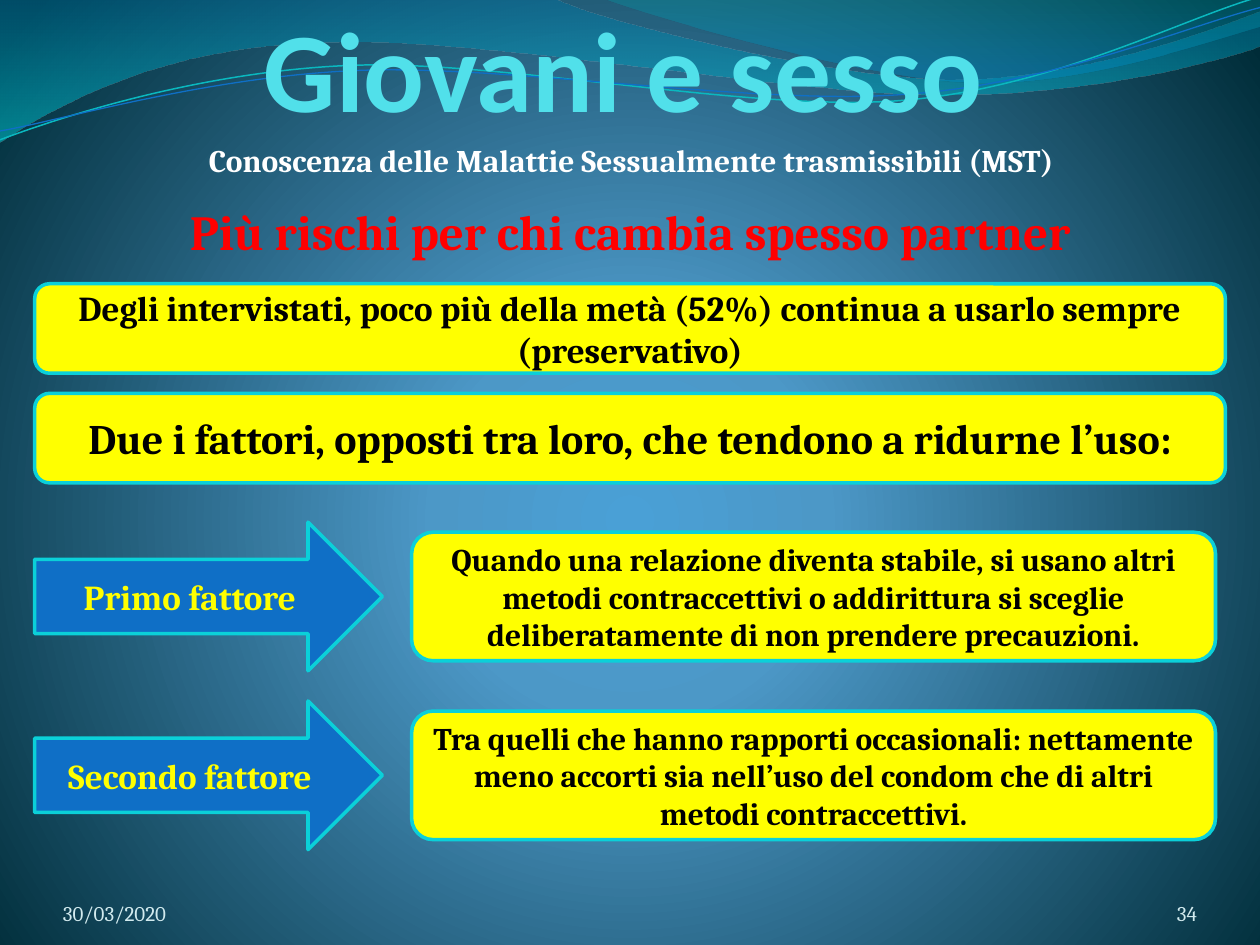
from pptx import Presentation
from pptx.dml.color import RGBColor
from pptx.enum.shapes import MSO_SHAPE
from pptx.enum.text import MSO_ANCHOR, MSO_AUTO_SIZE, PP_ALIGN
from pptx.oxml import parse_xml
from pptx.oxml.ns import nsdecls, qn
from pptx.util import Inches, Pt

WIDTH, HEIGHT = Inches(10), Inches(7.5)
COLORS = {
    "white": "FFFFFF", "black": "000000", "red": "FF0000", "yellow": "FFFF00",
    "title": "51E0EA", "footer": "D1EAEE", "blue": "0F6FC6",
    "outline": "0BD0D9", "strand": "0AB8BF",
}
BACKGROUND_STOPS = [(0, "4AA0D6", 100), (25, "4C98C7", 100), (100, "002C38", 100)]
RADIAL = '<a:path path="circle"><a:fillToRect l="10000" t="110000" r="10000" b="100000"/></a:path>'
DOWNWARD = '<a:lin ang="5400000" scaled="1"/>'
BANDS = [
    ([(0, 0), (4.4, -0.01), (4.76, 0.17, 6.64, 0.63, 7.58, 0.63),
      (8.53, 0.63, 9.58, 0.26, 10, 0.09), (10.01, 0.36),
      (9.83, 0.44, 8.7, 0.76, 7.46, 0.75), (6.22, 0.75, 3.82, 0.28, 2.57, 0.34),
      (1.29, 0.36, 0.46, 0.83, -0.01, 1.13), (0, 0)],
     [(0, "0074A1", 45), (100, "00C6CF", 55)]),
    ([(4.79, -0.01), (5.09, 0.11, 6.82, 0.62, 7.69, 0.65),
      (8.56, 0.69, 9.61, 0.32, 10, 0.21), (10, 0), (4.79, -0.01)],
     [(0, "00A1A9", 30), (80, "008BBF", 45)]),
]
STRANDS = [
    ([(0, 1.11), (0.48, 0.93, 1.58, 0.57, 2.77, 0.52),
      (3.95, 0.47, 5.93, 0.89, 7.13, 0.8), (8.33, 0.71, 9.38, 0.15, 9.98, -0.02)],
     "strand", 0.85),
    ([(0, 1.04), (0.47, 0.96, 1.64, 0.61, 2.83, 0.56),
      (4.03, 0.51, 5.97, 0.84, 7.17, 0.75), (8.36, 0.67, 9.41, 0.21, 10, 0.06)],
     "blue", 0.75),
]
STATEMENTS = [
    ("Degli intervistati, poco più della metà (52%) continua a usarlo sempre (preservativo)", 20),
    ("Due i fattori, opposti tra loro, che tendono a ridurne l’uso:", 24),
]
FACTORS = [
    ("Primo fattore",
     "Quando una relazione diventa stabile, si usano altri metodi contraccettivi o addirittura "
     "si sceglie deliberatamente di non prendere precauzioni."),
    ("Secondo fattore",
     "Tra quelli che hanno rapporti occasionali: nettamente meno accorti sia nell’uso del condom "
     "che di altri metodi contraccettivi."),
]


def color(name):
    return RGBColor.from_string(COLORS[name])


def area(left, top, width, height):
    return (int(WIDTH * left / 100), int(HEIGHT * top / 100),
            int(WIDTH * width / 100), int(HEIGHT * height / 100))


def apply_gradient(fill, owner, stops, direction):
    fill.gradient()
    stop_xml = "".join(
        f'<a:gs pos="{position * 1000}"><a:srgbClr val="{value}">'
        f'<a:alpha val="{opacity * 1000}"/></a:srgbClr></a:gs>'
        for position, value, opacity in stops)
    gradient = parse_xml(f'<a:gradFill {nsdecls("a")} rotWithShape="1">'
                         f'<a:gsLst>{stop_xml}</a:gsLst>{direction}</a:gradFill>')
    previous = owner.find(".//" + qn("a:gradFill"))
    previous.getparent().replace(previous, gradient)


def add_curve(slide, outline, close):
    ends = [(Inches(segment[-2]), Inches(segment[-1])) for segment in outline]
    builder = slide.shapes.build_freeform(*ends[0])
    builder.add_line_segments(ends[1:], close=close)
    shape = builder.convert_to_shape()
    shape.shadow.inherit = False
    lines = list(shape.element.iter(qn("a:lnTo")))
    for line, segment in zip(lines, outline[1:]):
        if len(segment) == 6:
            points = "".join(
                f'<a:pt x="{Inches(x) - shape.left}" y="{Inches(y) - shape.top}"/>'
                for x, y in zip(segment[::2], segment[1::2]))
            bezier = parse_xml(f'<a:cubicBezTo {nsdecls("a")}>{points}</a:cubicBezTo>')
            line.getparent().replace(line, bezier)
    return shape


def add_band(slide, outline, stops):
    shape = add_curve(slide, outline, True)
    apply_gradient(shape.fill, shape.element, stops, DOWNWARD)
    shape.line.fill.background()


def add_strand(slide, outline, color_name, width):
    shape = add_curve(slide, outline, False)
    shape.fill.background()
    shape.line.color.rgb = color(color_name)
    shape.line.width = Pt(width)


def write(shape, text, size, color_name, bold=True, align=PP_ALIGN.CENTER,
          anchor=MSO_ANCHOR.MIDDLE, font="Cambria", fit=MSO_AUTO_SIZE.NONE):
    frame = shape.text_frame
    frame.word_wrap = True
    frame.auto_size = fit
    frame.vertical_anchor = anchor
    paragraph = frame.paragraphs[0]
    paragraph.alignment = align
    run = paragraph.add_run()
    run.text = text
    run.font.name = font
    run.font.size = Pt(size)
    run.font.bold = bold
    run.font.color.rgb = color(color_name)


def remove_insets(shape):
    frame = shape.text_frame
    frame.margin_left = frame.margin_right = frame.margin_top = frame.margin_bottom = 0


def add_title(slide, text):
    title = slide.shapes.title
    title.left, title.top, title.width, title.height = area(9.1, 0, 81, 14.27)
    title.element.getparent().append(title.element)
    remove_insets(title)
    title.text_frame.margin_right = Inches(0.02)
    write(title, text, 64.8, "title", anchor=MSO_ANCHOR.BOTTOM, font="Calibri")


def add_heading(slide, box, text, size, color_name):
    shape = slide.shapes.add_textbox(*area(*box))
    write(shape, text, size, color_name, anchor=MSO_ANCHOR.TOP,
          fit=MSO_AUTO_SIZE.SHAPE_TO_FIT_TEXT)


def add_footer(slide, box, text, align):
    shape = slide.shapes.add_textbox(*area(*box))
    remove_insets(shape)
    write(shape, text, 12, "footer", False, align, MSO_ANCHOR.BOTTOM)


def add_panel(slide, kind, box, text, size, fill_name, text_name):
    shape = slide.shapes.add_shape(kind, *area(*box))
    shape.shadow.inherit = False
    shape.fill.solid()
    shape.fill.fore_color.rgb = color(fill_name)
    shape.line.color.rgb = color("outline")
    shape.line.width = Pt(2)
    write(shape, text, size, text_name)


def main():
    presentation = Presentation()
    presentation.slide_width, presentation.slide_height = WIDTH, HEIGHT
    slide = presentation.slides.add_slide(presentation.slide_layouts[5])
    apply_gradient(slide.background.fill, slide.element, BACKGROUND_STOPS, RADIAL)
    for outline, stops in BANDS:
        add_band(slide, outline, stops)
    for outline, color_name, width in STRANDS:
        add_strand(slide, outline, color_name, width)

    add_title(slide, "Giovani e sesso")
    add_heading(slide, (10.64, 14.27, 79.5, 5.33),
                "Conoscenza delle Malattie Sessualmente trasmissibili (MST) ", 18, "white")
    add_footer(slide, (5, 92.67, 23.3, 5.33), "30/03/2020", PP_ALIGN.LEFT)
    add_footer(slide, (86.7, 92.67, 8.3, 5.33), "34", PP_ALIGN.RIGHT)
    add_heading(slide, (8.26, 20.62, 83.5, 7.6),
                "Più rischi per chi cambia spesso partner", 28, "red")

    for row, (text, size) in enumerate(STATEMENTS):
        add_panel(slide, MSO_SHAPE.ROUNDED_RECTANGLE, (2.75, 30.03 + 11.6 * row, 94.5, 9.47),
                  text, size, "yellow", "black")
    for row, (label, text) in enumerate(FACTORS):
        top = 55.25 + 18.93 * row
        add_panel(slide, MSO_SHAPE.RIGHT_ARROW, (2.75, top, 27.6, 15.73),
                  label, 20, "blue", "yellow")
        add_panel(slide, MSO_SHAPE.ROUNDED_RECTANGLE, (32.67, top + 1.07, 63.8, 13.6),
                  text, 18, "yellow", "black")
    presentation.save("out.pptx")


if __name__ == "__main__":
    main()
